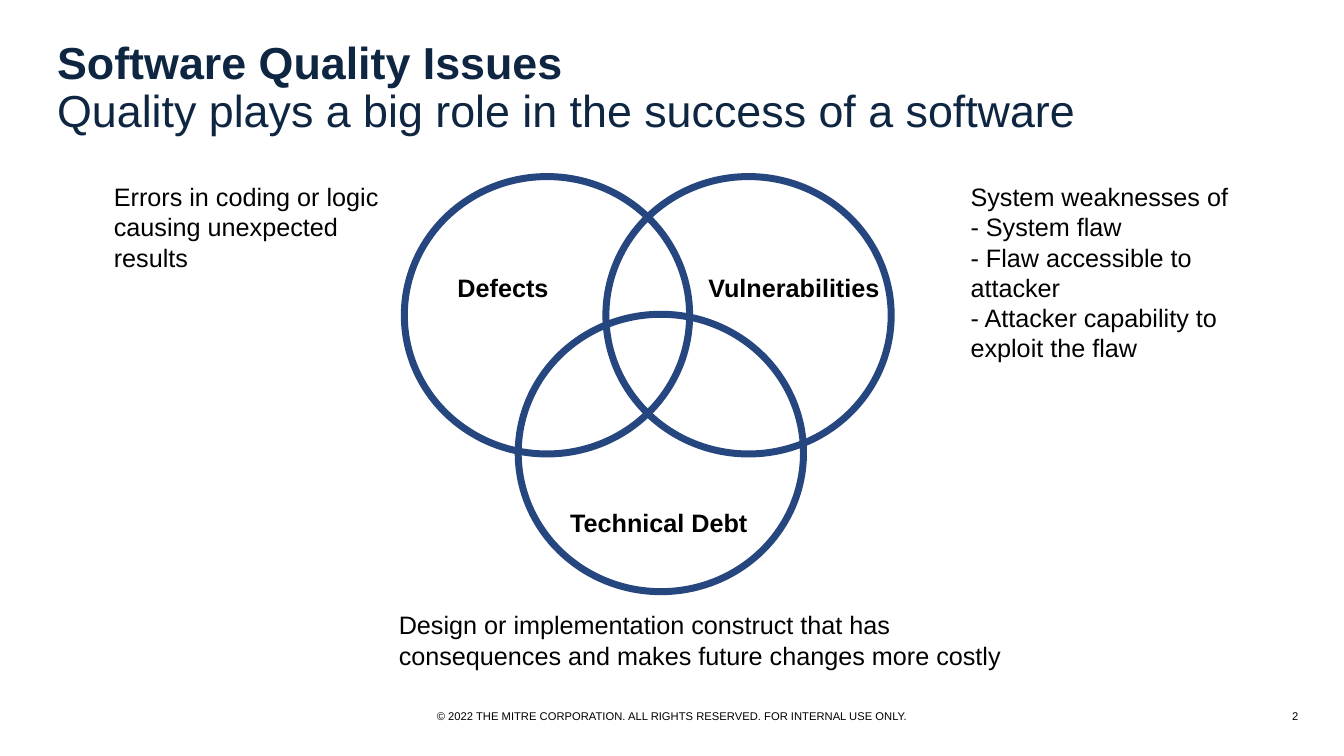
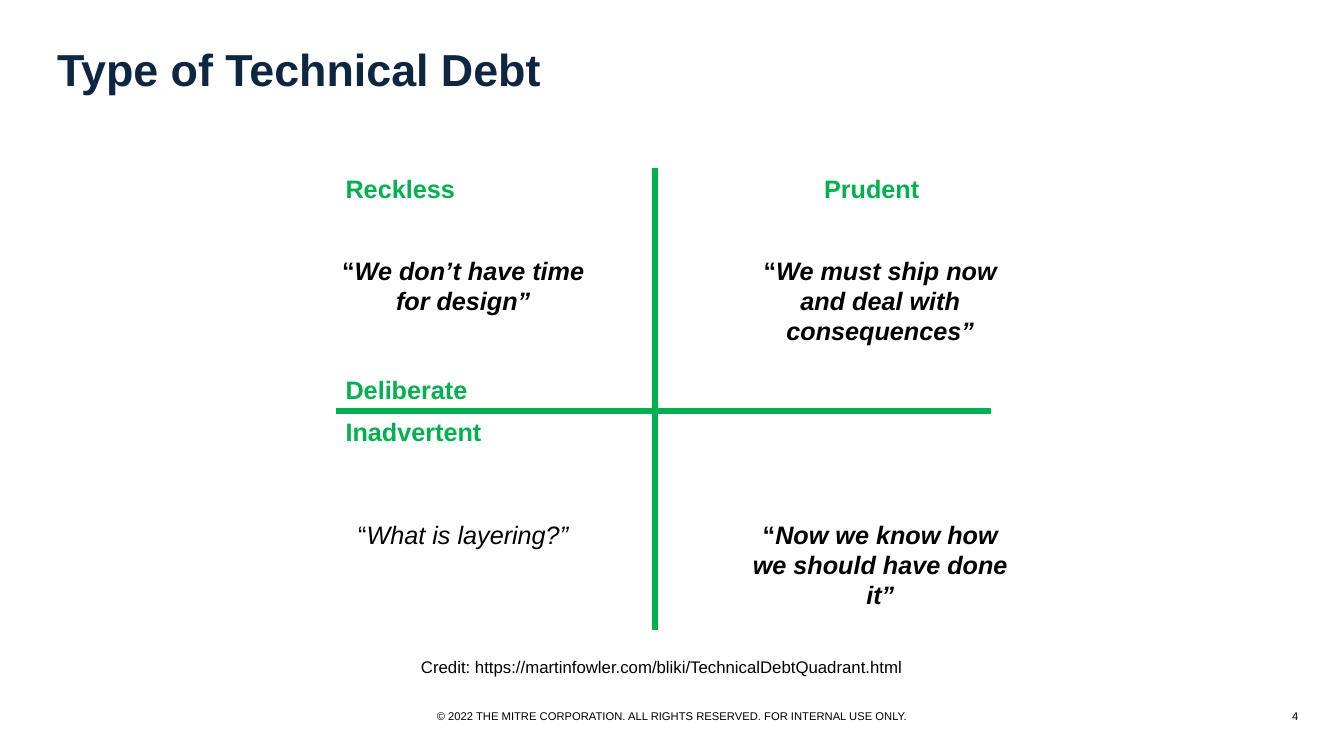
from dataclasses import dataclass

from lxml import etree
from pptx import Presentation
from pptx.dml.color import RGBColor
from pptx.enum import shapes, text
from pptx.oxml import ns
from pptx.util import Cm, Pt


@dataclass(frozen=True)
class Theme:
    font: str = "Arial"
    navy: str = "0E2641"
    blue: str = "26467F"
    green: str = "00B050"
    black: str = "000000"
    title_size: int = 32
    body_size: int = 18
    credit_size: int = 12
    footer_size: int = 8
    circle_line: int = 5
    axis_line: int = 4


THEME = Theme()
LEFT, CENTER, RIGHT = text.PP_ALIGN.LEFT, text.PP_ALIGN.CENTER, text.PP_ALIGN.RIGHT

# Content: lengths in centimetres
COPYRIGHT = "© 2022 THE MITRE CORPORATION. ALL RIGHTS RESERVED. FOR INTERNAL USE ONLY."

CIRCLE_WIDTH, CIRCLE_HEIGHT = 7.19, 6.99
CIRCLES = [(10.19, 4.45), (15.27, 4.45), (13.06, 7.92)]
CIRCLE_LABELS = [
    ("Defects", 11.28, 6.73),
    ("Vulnerabilities", 17.6, 6.73),
    ("Technical Debt", 14.12, 12.65),
]
NOTES = [
    (["Errors in coding or logic causing unexpected results"], (2.62, 4.45, 7.19, 2.56)),
    (["System weaknesses of", "- System flaw", "- Flaw accessible to attacker",
      "- Attacker capability to exploit the flaw"], (24.21, 4.45, 7.19, 4.88)),
    (["Design or implementation construct that has consequences and makes "
      "future changes more costly"], (9.8, 15.24, 16.23, 1.8)),
]

AXIS_LEFT, AXIS_RIGHT, AXIS_X = 8.46, 24.97, 16.51
AXIS_TOP, AXIS_BOTTOM, AXIS_Y = 4.24, 15.88, 10.36
LABEL_HEIGHT = 1.06
AXIS_LABELS = [
    ("Reckless", AXIS_LEFT, AXIS_TOP),
    ("Prudent", 20.52, AXIS_TOP),
    ("Deliberate", AXIS_LEFT, AXIS_Y - LABEL_HEIGHT),
    ("Inadvertent", AXIS_LEFT, AXIS_Y),
]
QUOTE_COLUMNS, QUOTE_ROWS = (8.18, 18.69), (6.3, 12.95)
QUOTES = [  # rows of (words, bold)
    [("We don’t have time for design”", True),
     ("We must ship now and deal with consequences”", True)],
    [("What is layering?”", False),
     ("Now we know how we should have done it”", True)],
]
CREDIT = "Credit: https://martinfowler.com/bliki/TechnicalDebtQuadrant.html"


# Drawing helpers
def add_text(slide, box, paragraphs, size=THEME.body_size, color=THEME.black,
             align=LEFT, anchor=text.MSO_ANCHOR.TOP, margins=True, spacing=None):
    """Each paragraph is a list of (words, bold, italic) runs."""
    shape = slide.shapes.add_textbox(*map(Cm, box))
    frame = shape.text_frame
    frame.word_wrap = True
    frame.vertical_anchor = anchor
    if not margins:
        frame.margin_left = frame.margin_right = frame.margin_top = frame.margin_bottom = 0
    for index, runs in enumerate(paragraphs):
        paragraph = frame.add_paragraph() if index else frame.paragraphs[0]
        paragraph.alignment = align
        if spacing:
            paragraph.line_spacing = spacing
        for words, bold, italic in runs:
            run = paragraph.add_run()
            run.text = words
            font = run.font
            font.name, font.size = THEME.font, Pt(size)
            font.bold, font.italic = bold, italic
            font.color.rgb = RGBColor.from_string(color)


def set_line(line, color, width):
    line.color.rgb = RGBColor.from_string(color)
    line.width = Pt(width)


def add_axis(slide, *ends):
    axis = slide.shapes.add_connector(shapes.MSO_CONNECTOR.STRAIGHT, *map(Cm, ends))
    set_line(axis.line, THEME.green, THEME.axis_line)
    etree.SubElement(axis.element.spPr, ns.qn("a:effectLst"))


def new_slide(presentation, number, title, subtitle=None):
    """Blank slide with the shared title and footer."""
    slide = presentation.slides.add_slide(presentation.slide_layouts[6])
    lines = [[(title, True, False)]]
    if subtitle:
        lines.append([(subtitle, False, False)])
    add_text(slide, (1.19, 1.02, 31.5, 2.57 if subtitle else 1.52), lines,
             THEME.title_size, THEME.navy, anchor=text.MSO_ANCHOR.BOTTOM, spacing=0.9)
    for words, left, width, align in [(COPYRIGHT, 4.7, 24.49, CENTER),
                                      (str(number), 30.99, 1.73, RIGHT)]:
        add_text(slide, (left, 17.78, width, 0.51), [[(words, False, False)]],
                 THEME.footer_size, align=align, anchor=text.MSO_ANCHOR.MIDDLE,
                 margins=False)
    return slide


# Slides
def build_quality_issues(presentation):
    slide = new_slide(presentation, 2, "Software Quality Issues",
                      "Quality plays a big role in the success of a software")
    for left, top in CIRCLES:
        circle = slide.shapes.add_shape(
            shapes.MSO_SHAPE.OVAL, Cm(left), Cm(top), Cm(CIRCLE_WIDTH), Cm(CIRCLE_HEIGHT))
        circle.shadow.inherit = False
        circle.fill.background()
        set_line(circle.line, THEME.blue, THEME.circle_line)
    for words, left, top in CIRCLE_LABELS:
        add_text(slide, (left, top, 5.69, 1.02), [[(words, True, False)]])
    for lines, box in NOTES:
        add_text(slide, box, [[(line, False, False)] for line in lines])


def build_debt_quadrant(presentation):
    slide = new_slide(presentation, 4, "Type of Technical Debt")
    add_axis(slide, AXIS_LEFT, AXIS_Y, AXIS_RIGHT, AXIS_Y)
    add_axis(slide, AXIS_X, AXIS_BOTTOM, AXIS_X, AXIS_TOP)
    for words, left, top in AXIS_LABELS:
        add_text(slide, (left, top, 6.78, LABEL_HEIGHT), [[(words, True, False)]],
                 color=THEME.green)
    for top, row in zip(QUOTE_ROWS, QUOTES):
        for left, (words, bold) in zip(QUOTE_COLUMNS, row):
            add_text(slide, (left, top, 6.99, 2.57),
                     [[("“", bold, False), (words, bold, True)]], align=CENTER)
    add_text(slide, (10.36, 16.43, 20.32, 0.76), [[(CREDIT, False, False)]],
             THEME.credit_size)


def main():
    presentation = Presentation()
    presentation.slide_width, presentation.slide_height = Cm(33.87), Cm(19.05)
    build_quality_issues(presentation)
    build_debt_quadrant(presentation)
    presentation.save("out.pptx")


if __name__ == "__main__":
    main()
